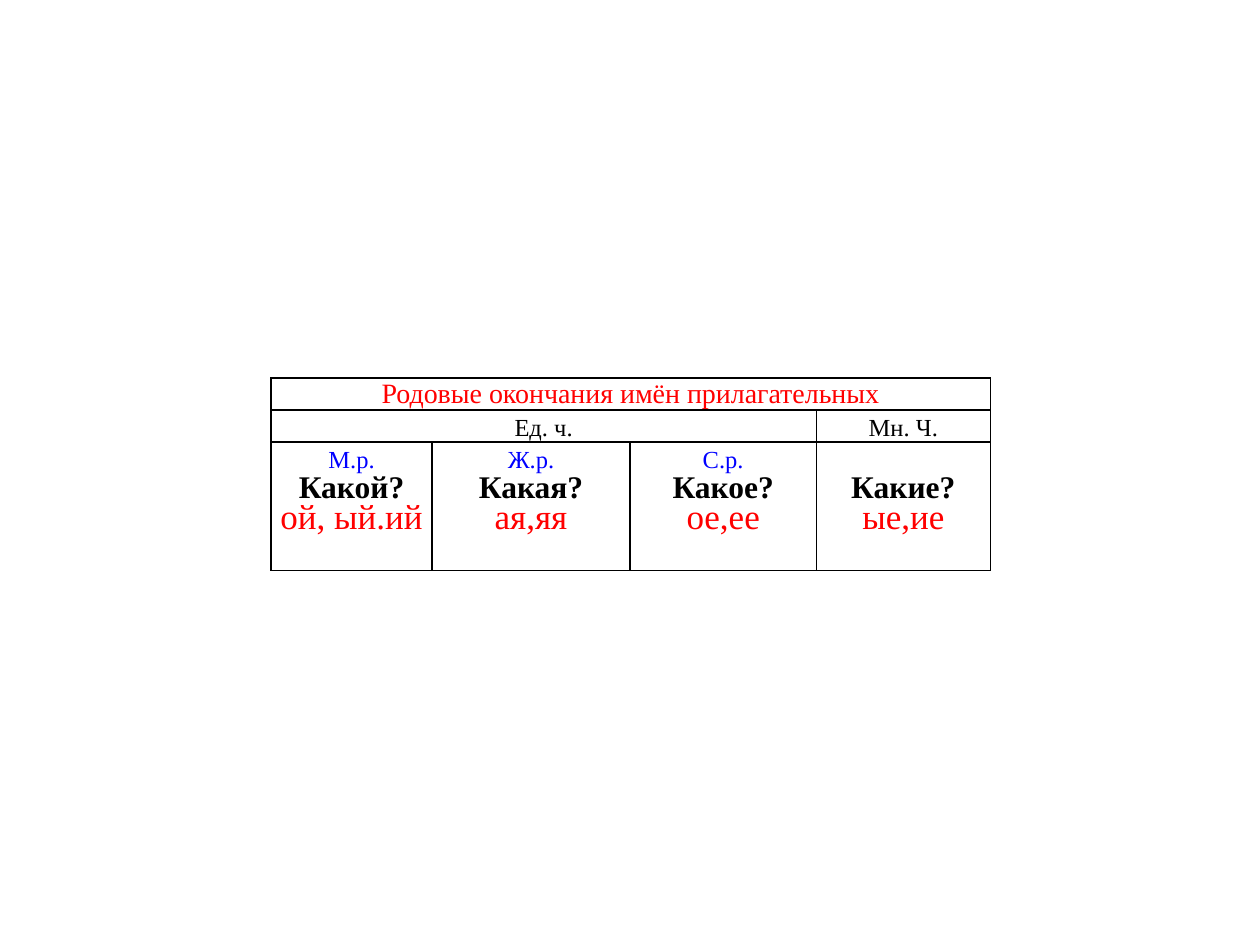
import pptx
import pptx.util
import pptx.dml.color
import pptx.enum.text
import pptx.oxml
import pptx.oxml.ns

Inches = pptx.util.Inches
Pt = pptx.util.Pt
RGBColor = pptx.dml.color.RGBColor

RED = RGBColor(0xFF, 0, 0)
BLUE = RGBColor(0, 0, 0xFF)
BLACK = RGBColor(0, 0, 0)
FONT = "Times New Roman"
LEAD = Pt(18.2)
COLS = [1.28, 1.57, 1.48, 1.38]
ROWS = [0.25, 0.25, 1.02]
FORMS = [
    ("М.р.", "Какой?", "ой, ый.ий"),
    ("Ж.р.", "Какая?", "ая,яя"),
    ("С.р.", "Какое?", "ое,ее"),
    ("", "Какие?", "ые,ие"),
]


def add_grid(slide):
    frame = slide.shapes.add_table(
        len(ROWS), len(COLS), Inches(2.15), Inches(3),
        Inches(sum(COLS)), Inches(sum(ROWS)))
    grid = frame.table
    grid.first_row = grid.horz_banding = False
    for col, width in zip(grid.columns, COLS):
        col.width = Inches(width)
    for row, height in zip(grid.rows, ROWS):
        row.height = Inches(height)
    for cell in grid.iter_cells():
        style_cell(cell)
    return grid


def style_cell(cell):
    cell.margin_left = cell.margin_right = Inches(0.07)
    cell.margin_top = cell.margin_bottom = 0
    props = cell._tc.get_or_add_tcPr()
    for side in ("lnL", "lnR", "lnT", "lnB"):
        props.append(pptx.oxml.parse_xml(
            f'<a:{side} {pptx.oxml.ns.nsdecls("a")} w="{Pt(1)}">'
            f'<a:solidFill><a:srgbClr val="{BLACK}"/></a:solidFill></a:{side}>'))
    cell.fill.background()


def fill_cell(cell, lines):
    frame = cell.text_frame
    frame.text = "\n".join(text for text, *_ in lines)
    for para, (_, size, color, bold) in zip(frame.paragraphs, lines):
        para.alignment = pptx.enum.text.PP_ALIGN.CENTER
        para.line_spacing = LEAD
        para.font.name = FONT
        para.font.size = Pt(size)
        para.font.color.rgb = color
        para.font.bold = bold


def fill_form(cell, gender, question, ending):
    lines = [(question, 18, BLACK, True), (ending, 20, RED, False)]
    if gender:
        lines.insert(0, (gender, 14, BLUE, False))
    else:
        cell.margin_top = LEAD
    fill_cell(cell, lines)


def main():
    deck = pptx.Presentation()
    deck.slide_width, deck.slide_height = Inches(10), Inches(7.5)
    slide = deck.slides.add_slide(deck.slide_layouts[6])
    grid = add_grid(slide)
    grid.cell(0, 0).merge(grid.cell(0, 3))
    grid.cell(1, 0).merge(grid.cell(1, 2))
    fill_cell(grid.cell(0, 0),
              [("Родовые окончания имён прилагательных", 16, RED, False)])
    for col, text in ((0, "Ед. ч."), (3, "Мн. Ч.")):
        fill_cell(grid.cell(1, col), [(text, 14, BLACK, False)])
    for col, form in enumerate(FORMS):
        fill_form(grid.cell(2, col), *form)
    deck.save("out.pptx")


if __name__ == "__main__":
    main()
